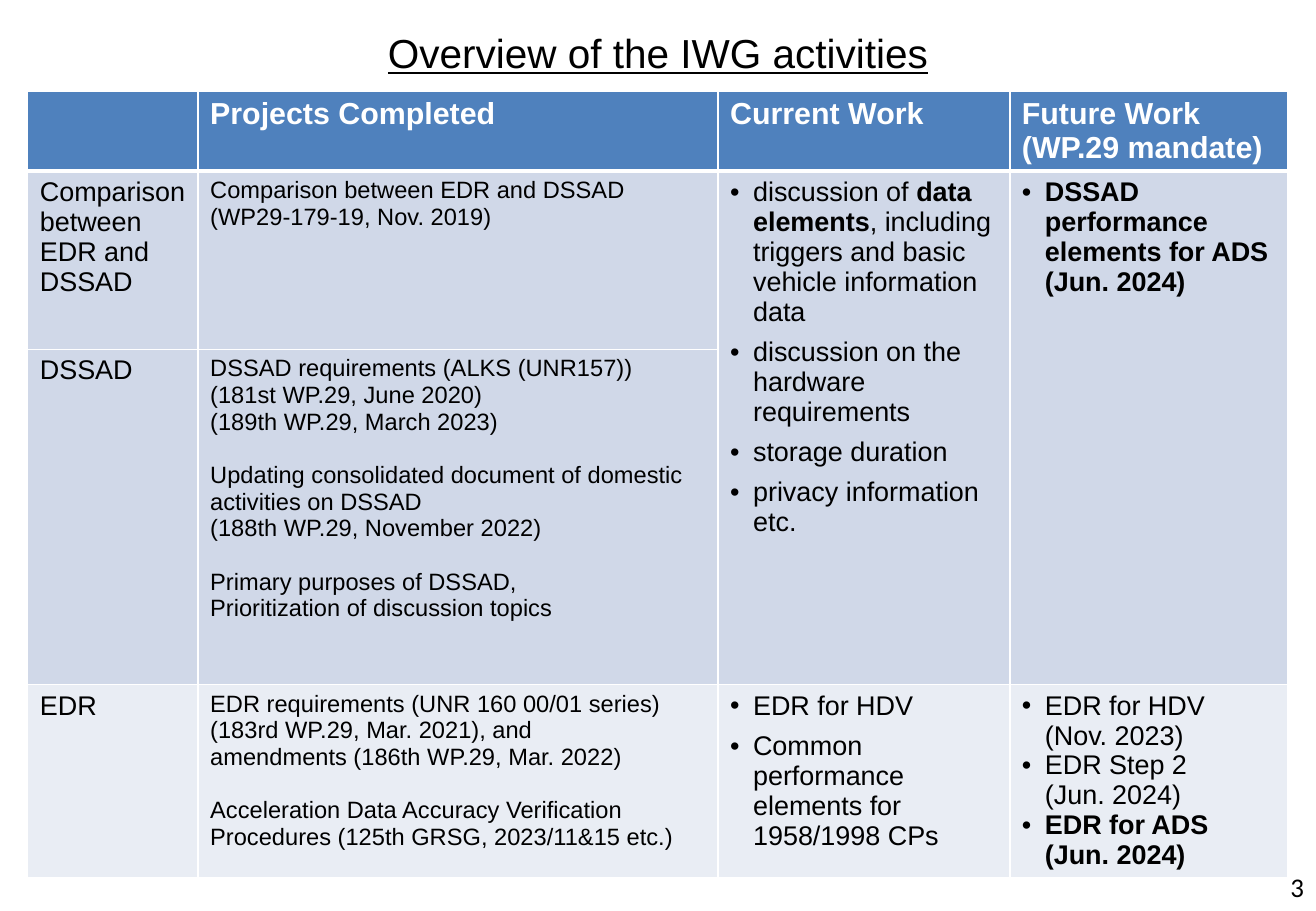
from copy import deepcopy
from dataclasses import dataclass

from lxml import etree
from pptx import Presentation
from pptx.dml.color import RGBColor as Rgb
from pptx.enum import text as tx
from pptx.oxml.ns import qn
from pptx.util import Cm, Pt


@dataclass(frozen=True)
class Theme:
    font: str = "Arial"
    num_font: str = "Calibri"
    ink: str = "000000"
    white: str = "FFFFFF"
    head: str = "4F81BD"
    band: str = "D0D8E8"
    pale: str = "E9EDF4"
    title: int = 24
    top: int = 18
    body: int = 16
    small: int = 14
    gap: int = 6
    blank: int = 16


T = Theme()
COLS = (3.56, 10.87, 6.1, 5.81)
ROWS = (1.67, 3.73, 7.01, 4.03)
FILLS = (T.head, T.band, T.band, T.pale)
DONE, NOW, NEXT = 1, 2, 3

# Asterisks enclose bold text; a "+" starts a paragraph set off by a gap.
HEADS = ("", "*Projects Completed*", "*Current Work*", "*Future Work\n(WP.29 mandate)*")
BODY = (
    (
        ["Comparison between EDR and DSSAD"],
        ["Comparison between EDR and DSSAD", "(WP29-179-19, Nov. 2019)"],
        [
            "discussion of *data elements*, including triggers and basic vehicle information data",
            "+discussion on the hardware requirements",
            "+storage duration",
            "+privacy information etc.",
        ],
        ["*DSSAD performance elements for ADS (Jun. 2024)*"],
    ),
    (
        ["DSSAD"],
        [
            "DSSAD requirements (ALKS (UNR157))\n(181st WP.29, June 2020)",
            "(189th WP.29, March 2023)",
            "+Updating consolidated document of domestic activities on DSSAD",
            "(188th WP.29, November 2022)",
            "+Primary purposes of DSSAD,",
            "Prioritization of discussion topics",
        ],
        [],
        [],
    ),
    (
        ["EDR"],
        [
            "EDR requirements (UNR 160 00/01 series) (183rd WP.29, Mar. 2021), and\n"
            "amendments (186th WP.29, Mar. 2022)",
            "+Acceleration Data Accuracy Verification Procedures (125th GRSG, 2023/11&15 etc.)",
        ],
        ["EDR for HDV", "+Common performance elements for 1958/1998 CPs"],
        [
            "EDR for HDV\n(Nov. 2023)",
            "EDR Step 2\n(Jun. 2024)",
            "*EDR for ADS\n(Jun. 2024)*",
        ],
    ),
)


def add_run(para, words, size, color=T.ink, bold=False, font=T.font):
    run = para.add_run()
    run.text = words
    run.font.name, run.font.size, run.font.bold = font, Pt(size), bold
    run.font.color.rgb = Rgb.from_string(color)
    return run


def add_rich(para, words, size, color):
    """Write text with bold parts and line breaks."""
    for i, part in enumerate(words.split("*")):
        for j, line in enumerate(part.split("\n")):
            if j:
                para.add_line_break()
                para._p[-1].append(deepcopy(run._r.rPr))
            if line:
                run = add_run(para, line, size, color, bold=i % 2 == 1)


def add_bullet(para):
    props = para._p.get_or_add_pPr()
    props.set("marL", str(Cm(0.48)))
    props.set("indent", str(Cm(-0.48)))
    etree.SubElement(props, qn("a:buFont")).set("typeface", T.font)
    etree.SubElement(props, qn("a:buChar")).set("char", "•")


def fill_cell(cell, paras, size, color, gap, bullet):
    frame = cell.text_frame
    for i, words in enumerate(paras):
        para = frame.add_paragraph() if i else frame.paragraphs[0]
        if words.startswith("+"):
            para.space_before = Pt(gap)
        if bullet:
            add_bullet(para)
        add_rich(para, words.lstrip("+"), size, color)


def style_cell(cell, color, base):
    """Give a cell its white rules, then its fill."""
    props = cell._tc.get_or_add_tcPr()
    for side, width in (("L", 1), ("R", 1), ("T", 1), ("B", base)):
        rule = etree.SubElement(props, qn("a:ln" + side), w=str(Pt(width)))
        paint = etree.SubElement(rule, qn("a:solidFill"))
        etree.SubElement(paint, qn("a:srgbClr")).set("val", T.white)
    cell.fill.solid()
    cell.fill.fore_color.rgb = Rgb.from_string(color)


def add_title(slide, box):
    title = slide.shapes.title
    title.left, title.top, title.width, title.height = box
    frame = title.text_frame
    frame.margin_left = frame.margin_right = frame.margin_top = frame.margin_bottom = 0
    frame.vertical_anchor = tx.MSO_ANCHOR.MIDDLE
    para = frame.paragraphs[0]
    para.alignment = tx.PP_ALIGN.CENTER
    add_run(para, "Overview of the IWG activities", T.title).font.underline = True


def add_grid(slide, box):
    table = slide.shapes.add_table(len(ROWS), len(COLS), *box).table
    table.horz_banding = False
    for col, width in zip(table.columns, COLS):
        col.width = Cm(width)
    for r, (row, height) in enumerate(zip(table.rows, ROWS)):
        row.height = Cm(height)
        for cell in row.cells:
            style_cell(cell, FILLS[r], 1 if r else 3)
    for c in (NOW, NEXT):
        table.cell(1, c).merge(table.cell(2, c))
    for c, words in enumerate(HEADS):
        if words:
            fill_cell(table.cell(0, c), [words], T.top, T.white, 0, False)
    for r, row in enumerate(BODY, 1):
        for c, paras in enumerate(row):
            size, gap = (T.small, T.blank) if c == DONE else (T.body, T.gap)
            fill_cell(table.cell(r, c), paras, size, T.ink, gap, c in (NOW, NEXT))


def add_number(slide, box):
    frame = slide.shapes.add_textbox(*box).text_frame
    frame.word_wrap = True
    frame.vertical_anchor = tx.MSO_ANCHOR.MIDDLE
    para = frame.paragraphs[0]
    para.alignment = tx.PP_ALIGN.RIGHT
    add_run(para, "3", T.body, font=T.num_font)


def main():
    deck = Presentation()
    deck.slide_width, deck.slide_height = Cm(27.51), Cm(19.05)
    slide = deck.slides.add_slide(deck.slide_layouts[5])
    add_title(slide, (Cm(1.37), Cm(0.51), Cm(24.77), Cm(1.17)))
    add_grid(slide, (Cm(0.58), Cm(1.9), Cm(sum(COLS)), Cm(sum(ROWS))))
    add_number(slide, (Cm(21.1), Cm(18.03), Cm(6.41), Cm(1.02)))
    deck.save("out.pptx")


if __name__ == "__main__":
    main()
